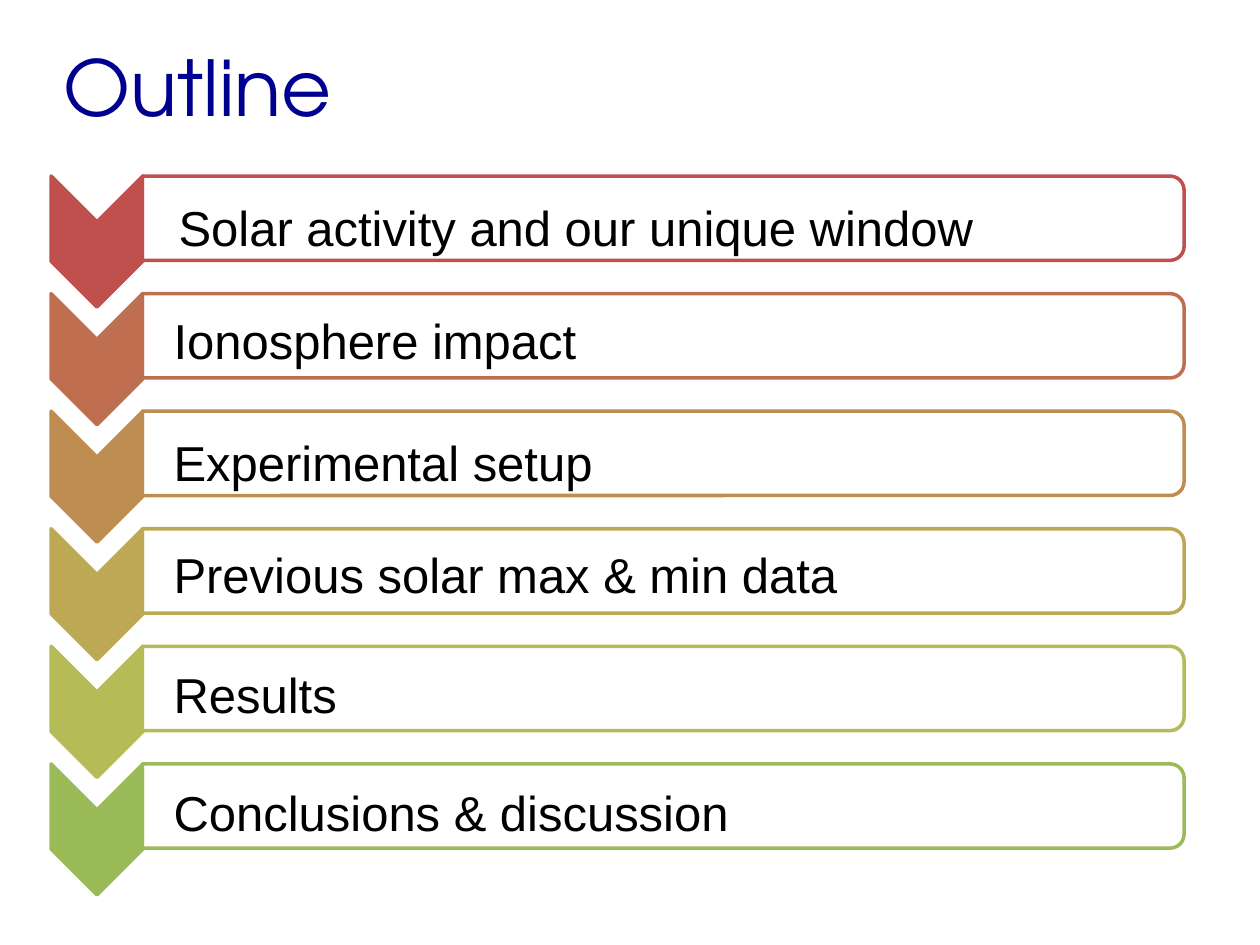
from lxml import etree
from pptx import Presentation
from pptx.dml.color import RGBColor
from pptx.enum.shapes import MSO_SHAPE
from pptx.enum.text import MSO_ANCHOR
from pptx.oxml.ns import qn
from pptx.util import Cm, Pt

CHEVRON = MSO_SHAPE.CHEVRON
BAR = MSO_SHAPE.ROUND_2_SAME_RECTANGLE
MIDDLE = MSO_ANCHOR.MIDDLE
TOP = MSO_ANCHOR.TOP

FIRST_ROW = 3.55
ROW_PITCH = 2.37

# label, colour, label top, label width, line spacing, indent
TOPICS = [
    ("Solar activity and our unique window", "C0504D", 3.15, 20.65, 1.5, 0.1),
    ("Ionosphere impact", "BF6F4F", 6.02, 8.76, 1, 0),
    ("Experimental setup", "BE8D52", 8.48, 9.04, 1, 0),
    ("Previous solar max & min data", "BDA954", 10.74, 14.05, 1, 0),
    ("Results", "B5BC57", 13.16, 3.84, 1, 0),
    ("Conclusions & discussion", "9BBB59", 15.54, 11.81, 1, 0),
]


def rgb(value):
    return RGBColor.from_string(value)


class OutlineSlide:
    title_font = "TeX Gyre Adventor"
    body_font = "Arial"
    line_width = Pt(2)

    def __init__(self, presentation):
        self.slide = presentation.slides.add_slide(presentation.slide_layouts[6])

    def turned_shape(self, kind, left, top, width, height, fill, line, opacity=100):
        """Add a shape turned by 90 degrees that covers the given box."""
        shift = (width - height) / 2
        shape = self.slide.shapes.add_shape(
            kind, Cm(left + shift), Cm(top - shift), Cm(height), Cm(width))
        shape.rotation = 90
        shape.shadow.inherit = False
        shape.fill.solid()
        shape.fill.fore_color.rgb = rgb(fill)
        shape.line.color.rgb = rgb(line)
        shape.line.width = self.line_width
        if opacity < 100:
            colour = shape.fill._xPr.find(qn("a:solidFill"))[0]
            etree.SubElement(colour, qn("a:alpha"), val=str(opacity * 1000))

    def text(self, words, left, top, width, height, font, size, colour,
             anchor=TOP, inset=0.23, spacing=1, indent=0):
        frame = self.slide.shapes.add_textbox(
            Cm(left), Cm(top), Cm(width), Cm(height)).text_frame
        frame.word_wrap = True
        frame.vertical_anchor = anchor
        frame.margin_top = Cm(inset)
        frame.margin_left = Cm(0.25 + indent)
        paragraph = frame.paragraphs[0]
        paragraph.text = words
        paragraph.line_spacing = spacing
        paragraph.font.name = font
        paragraph.font.size = Pt(size)
        paragraph.font.color.rgb = rgb(colour)

    def title(self, words):
        self.text(words, 1.04, 0.48, 23.16, 2.51, self.title_font, 44,
                  "000090", anchor=MIDDLE, inset=0.13)

    def topic_frame(self, top, colour):
        self.turned_shape(CHEVRON, 1.03, top, 1.85, 2.64, colour, colour)
        self.turned_shape(BAR, 2.87, top, 21, 1.7, "FFFFFF", colour, opacity=90)

    def topic_label(self, words, top, width, spacing, indent):
        self.text(words, 3.25, top, width, 2.05, self.body_font, 28,
                  "000000", spacing=spacing, indent=indent)


def main():
    presentation = Presentation()
    presentation.slide_width = Cm(25.4)
    presentation.slide_height = Cm(19.05)
    outline = OutlineSlide(presentation)
    outline.title("Outline")
    for row, (words, colour, top, width, spacing, indent) in enumerate(TOPICS):
        outline.topic_frame(FIRST_ROW + row * ROW_PITCH, colour)
        outline.topic_label(words, top, width, spacing, indent)
    presentation.save("out.pptx")


if __name__ == "__main__":
    main()
